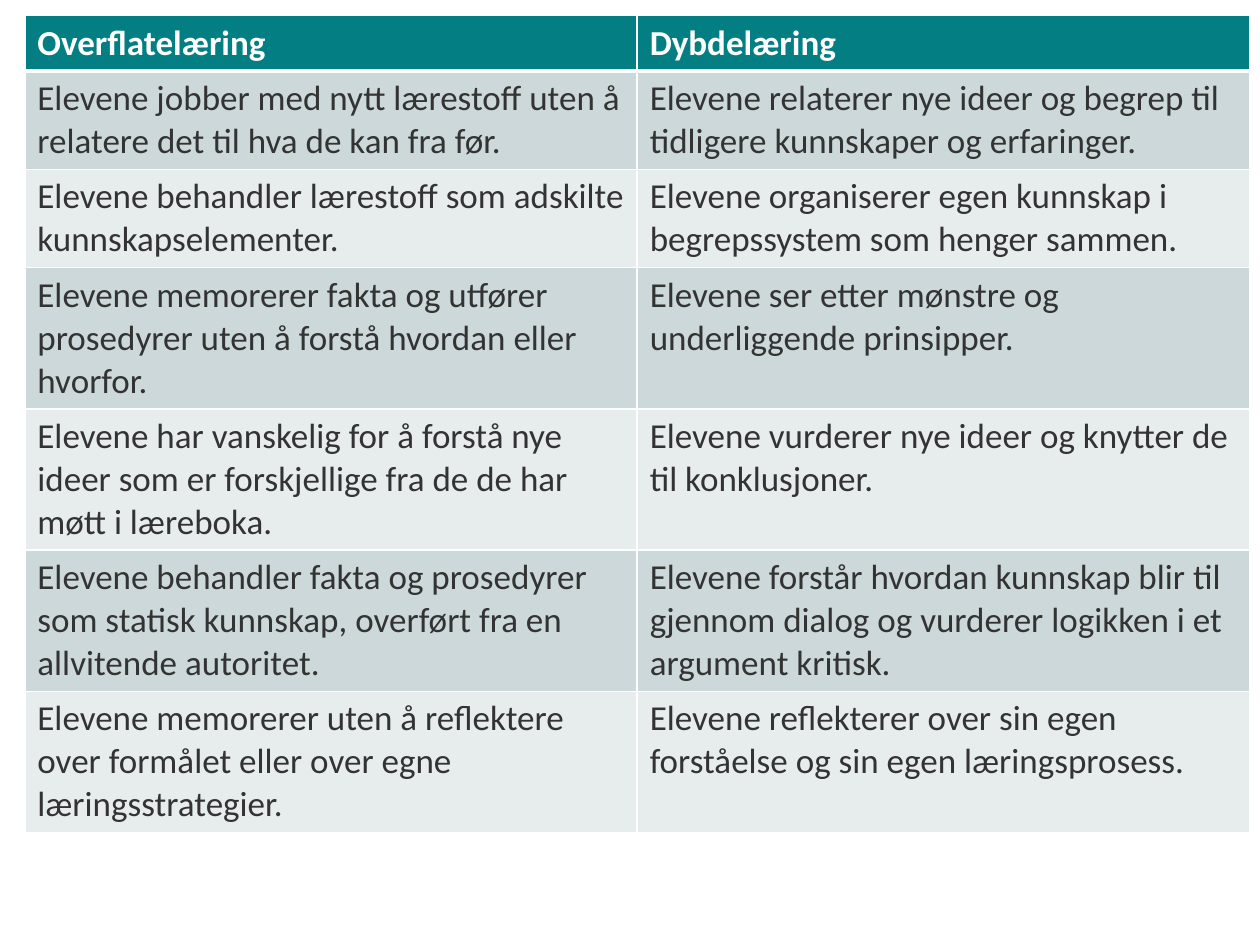
from lxml import etree
from pptx import Presentation
from pptx import util as u
from pptx.dml.color import RGBColor
from pptx.enum import text as t
from pptx.oxml import ns

WHITE = RGBColor(0xFF, 0xFF, 0xFF)
TEAL = RGBColor(0x03, 0x7F, 0x83)
DARK_BAND = RGBColor(0xCC, 0xD8, 0xD9)
LIGHT_BAND = RGBColor(0xE7, 0xEC, 0xED)
CHARCOAL = RGBColor(0x33, 0x33, 0x33)

HEADINGS = ("Overflatelæring", "Dybdelæring")
TWO_LINES, THREE_LINES = 1.97, 2.84
CONTRASTS = [
    (TWO_LINES,
     "Elevene jobber med nytt lærestoff uten å relatere det til hva de kan fra før.",
     "Elevene relaterer nye ideer og begrep til tidligere kunnskaper og erfaringer."),
    (TWO_LINES,
     "Elevene behandler lærestoff som adskilte kunnskapselementer.",
     "Elevene organiserer egen kunnskap i begrepssystem som henger sammen."),
    (THREE_LINES,
     "Elevene memorerer fakta og utfører prosedyrer uten å forstå hvordan eller hvorfor.",
     "Elevene ser etter mønstre og underliggende prinsipper."),
    (THREE_LINES,
     "Elevene har vanskelig for å forstå nye ideer som er forskjellige fra de de har møtt i læreboka.",
     "Elevene vurderer nye ideer og knytter de til konklusjoner."),
    (THREE_LINES,
     "Elevene behandler fakta og prosedyrer som statisk kunnskap, overført fra en allvitende autoritet.",
     "Elevene forstår hvordan kunnskap blir til gjennom dialog og vurderer logikken i et argument kritisk."),
    (THREE_LINES,
     "Elevene memorerer uten å reflektere over formålet eller over egne læringsstrategier.",
     "Elevene reflekterer over sin egen forståelse og sin egen læringsprosess."),
]


def write(frame, wording, *, font, size, color, bold=False):
    paragraph = frame.paragraphs[0]
    paragraph.alignment = t.PP_ALIGN.LEFT
    run = paragraph.add_run()
    run.text = wording
    run.font.name = font
    run.font.size = u.Pt(size)
    run.font.bold = bold
    run.font.color.rgb = color


class LearningSlide:
    font = "Calibri"
    size = 20
    rule = 1
    heading_rule = 3

    def __init__(self, deck):
        self.slide = deck.slides.add_slide(deck.slide_layouts[6])

    def borders(self, cell, top, bottom):
        properties = cell._tc.get_or_add_tcPr()
        widths = {"L": self.rule, "R": self.rule, "T": top, "B": bottom}
        for side, width in widths.items():
            line = etree.SubElement(properties, ns.qn(f"a:ln{side}"), w=str(u.Pt(width)))
            fill = etree.SubElement(line, ns.qn("a:solidFill"))
            etree.SubElement(fill, ns.qn("a:srgbClr"), val=str(WHITE))

    def cell(self, cell, wording, fill, color, bold=False, top=rule, bottom=rule):
        self.borders(cell, top, bottom)
        cell.fill.solid()
        cell.fill.fore_color.rgb = fill
        write(cell.text_frame, wording, font=self.font, size=self.size,
              color=color, bold=bold)

    def table(self, headings, contrasts, left, top, width, heading_height):
        heights = [heading_height] + [height for height, *_ in contrasts]
        grid = self.slide.shapes.add_table(
            len(heights), len(headings), u.Cm(left), u.Cm(top),
            u.Cm(width), u.Cm(sum(heights))).table
        for row, height in zip(grid.rows, heights):
            row.height = u.Cm(height)
        for column, heading in enumerate(headings):
            self.cell(grid.cell(0, column), heading, TEAL, WHITE, bold=True,
                      bottom=self.heading_rule)
        for row, (_, *statements) in enumerate(contrasts, start=1):
            band = DARK_BAND if row % 2 else LIGHT_BAND
            upper = self.heading_rule if row == 1 else self.rule
            for column, statement in enumerate(statements):
                self.cell(grid.cell(row, column), statement, band, CHARCOAL, top=upper)


def main():
    deck = Presentation()
    deck.slide_width, deck.slide_height = u.Cm(25.4), u.Cm(19.05)
    LearningSlide(deck).table(HEADINGS, CONTRASTS, left=0.5, top=0.31,
                              width=24.69, heading_height=1.1)
    deck.save("out.pptx")


if __name__ == "__main__":
    main()
